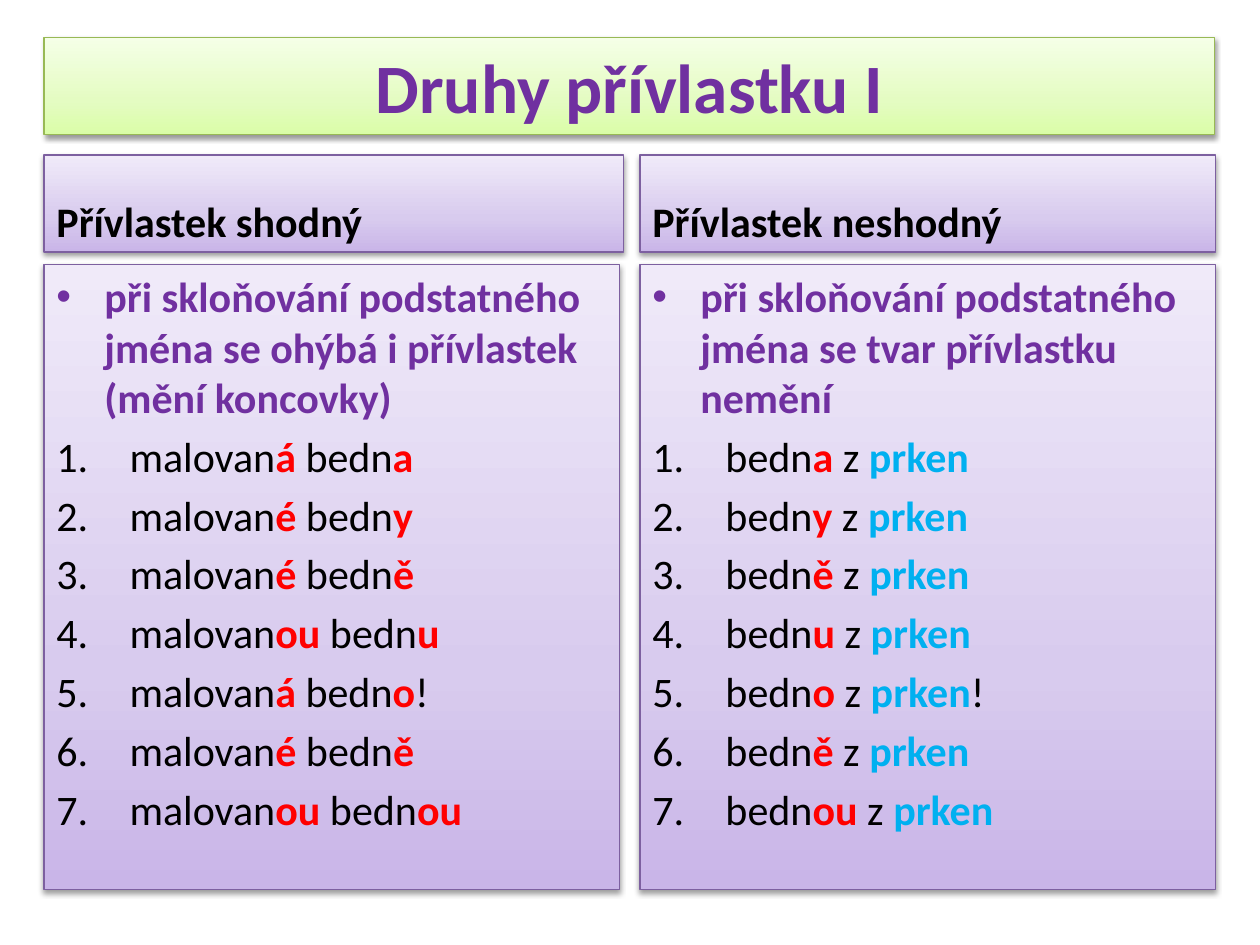
from dataclasses import dataclass

from pptx import Presentation
from pptx import util as u
from pptx.dml.color import RGBColor
from pptx.enum import shapes, text
from pptx.oxml import parse_xml
from pptx.oxml.ns import nsdecls, qn

TITLE = "Druhy přívlastku I"
# One row per grammatical case: adjective ending, noun ending, closing mark
CASES = [
    ("á", "a", ""),
    ("é", "y", ""),
    ("é", "ě", ""),
    ("ou", "u", ""),
    ("á", "o", "!"),
    ("é", "ě", ""),
    ("ou", "ou", ""),
]
COLUMNS = [
    {
        "heading": "Přívlastek shodný",
        "rule": "při skloňování podstatného jména se ohýbá i přívlastek (mění koncovky)",
        "examples": [
            [("malovan", "plain"), (adjective, "ending"), (" bedn", "plain"),
             (noun, "ending"), (mark, "plain")]
            for adjective, noun, mark in CASES
        ],
    },
    {
        "heading": "Přívlastek neshodný",
        "rule": "při skloňování podstatného jména se tvar přívlastku nemění",
        "examples": [
            [("bedn", "plain"), (noun, "ending"), (" z ", "plain"),
             ("prken", "fixed"), (mark, "plain")]
            for _, noun, mark in CASES
        ],
    },
]


@dataclass(frozen=True)
class Theme:
    font = "Calibri"
    title_size = 39.6
    body_size = 24
    space_before = 4.8
    # Style name: colour, bold
    styles = {
        "accent": ("7030A0", True),
        "heading": ("000000", True),
        "plain": ("000000", False),
        "ending": ("FF0000", True),
        "fixed": ("00B0F0", True),
    }
    # Gradient stops from bottom to top, then the outline
    green = (("DAFDA7", "E4FCC2", "F5FFE7"), "98B955")
    purple = (("C9B5E8", "D8CBEE", "F0EAF9"), "7D60A0")


THEME = Theme()
LEFTS = (0.35, 5.08)
COLUMN_WIDTH = 4.57
HEADING_WIDTHS = (4.6, COLUMN_WIDTH)
TITLE_TOP, HEADING_TOP, BODY_TOP = 0.3, 1.23, 2.1
BAND_HEIGHT, BODY_HEIGHT = 0.77, 4.96
TITLE_WIDTH = 9.29


def add_panel(page, left, top, width, height, palette, anchor):
    """Add a gradient rectangle with a soft shadow; return its text frame."""
    stops, outline = palette
    box = page.shapes.add_shape(
        shapes.MSO_SHAPE.RECTANGLE, *map(u.Inches, (left, top, width, height)))
    box.line.color.rgb = RGBColor.from_string(outline)
    box.line.width = u.Pt(0.75)
    box.shadow.inherit = False
    properties = box._element.spPr
    stop_xml = "".join(
        f'<a:gs pos="{position}"><a:srgbClr val="{colour}"/></a:gs>'
        for position, colour in zip((0, 35000, 100000), stops))
    properties.find(qn("a:prstGeom")).addnext(parse_xml(
        f'<a:gradFill {nsdecls("a")} rotWithShape="1"><a:gsLst>{stop_xml}</a:gsLst>'
        '<a:lin ang="16200000" scaled="1"/></a:gradFill>'))
    properties.find(qn("a:effectLst")).append(parse_xml(
        f'<a:outerShdw {nsdecls("a")} blurRad="{u.Pt(3.1)}" dist="{u.Pt(1.6)}" '
        'dir="5400000" rotWithShape="0"><a:srgbClr val="000000">'
        '<a:alpha val="38000"/></a:srgbClr></a:outerShdw>'))
    frame = box.text_frame
    frame.word_wrap = True
    frame.vertical_anchor = anchor
    return frame


def write(para, spans, size, align=text.PP_ALIGN.LEFT):
    para.alignment = align
    for words, style in spans:
        if not words:
            continue
        colour, bold = THEME.styles[style]
        span = para.add_run()
        span.text = words
        span.font.name = THEME.font
        span.font.size = u.Pt(size)
        span.font.bold = bold
        span.font.color.rgb = RGBColor.from_string(colour)


def set_bullet(para, indent, *bullet_xml):
    properties = para._p.get_or_add_pPr()
    properties.set("marL", str(u.Inches(indent)))
    properties.set("indent", str(-u.Inches(indent)))
    for tag in bullet_xml:
        properties.append(parse_xml(f'<a:{tag} {nsdecls("a")}/>'))


def add_column(page, column, left, heading_width):
    heading = add_panel(page, left, HEADING_TOP, heading_width, BAND_HEIGHT,
                        THEME.purple, text.MSO_ANCHOR.BOTTOM)
    write(heading.paragraphs[0], [(column["heading"], "heading")], THEME.body_size)

    body = add_panel(page, left, BODY_TOP, COLUMN_WIDTH, BODY_HEIGHT,
                     THEME.purple, text.MSO_ANCHOR.TOP)
    rule = body.paragraphs[0]
    write(rule, [(column["rule"], "accent")], THEME.body_size)
    rule.space_before = u.Pt(THEME.space_before)
    set_bullet(rule, 0.38, 'buFont typeface="Arial"', 'buChar char="•"')
    for example in column["examples"]:
        para = body.add_paragraph()
        write(para, example, THEME.body_size)
        para.space_before = u.Pt(THEME.space_before)
        set_bullet(para, 0.58, 'buFont typeface="+mj-lt"',
                   'buAutoNum type="arabicPeriod"')


def main():
    deck = Presentation()
    deck.slide_width, deck.slide_height = u.Inches(10), u.Inches(7.5)
    page = deck.slides.add_slide(deck.slide_layouts[6])
    title = add_panel(page, LEFTS[0], TITLE_TOP, TITLE_WIDTH, BAND_HEIGHT,
                      THEME.green, text.MSO_ANCHOR.MIDDLE)
    write(title.paragraphs[0], [(TITLE, "accent")], THEME.title_size,
          text.PP_ALIGN.CENTER)
    for column, left, heading_width in zip(COLUMNS, LEFTS, HEADING_WIDTHS):
        add_column(page, column, left, heading_width)
    deck.save("out.pptx")


if __name__ == "__main__":
    main()
